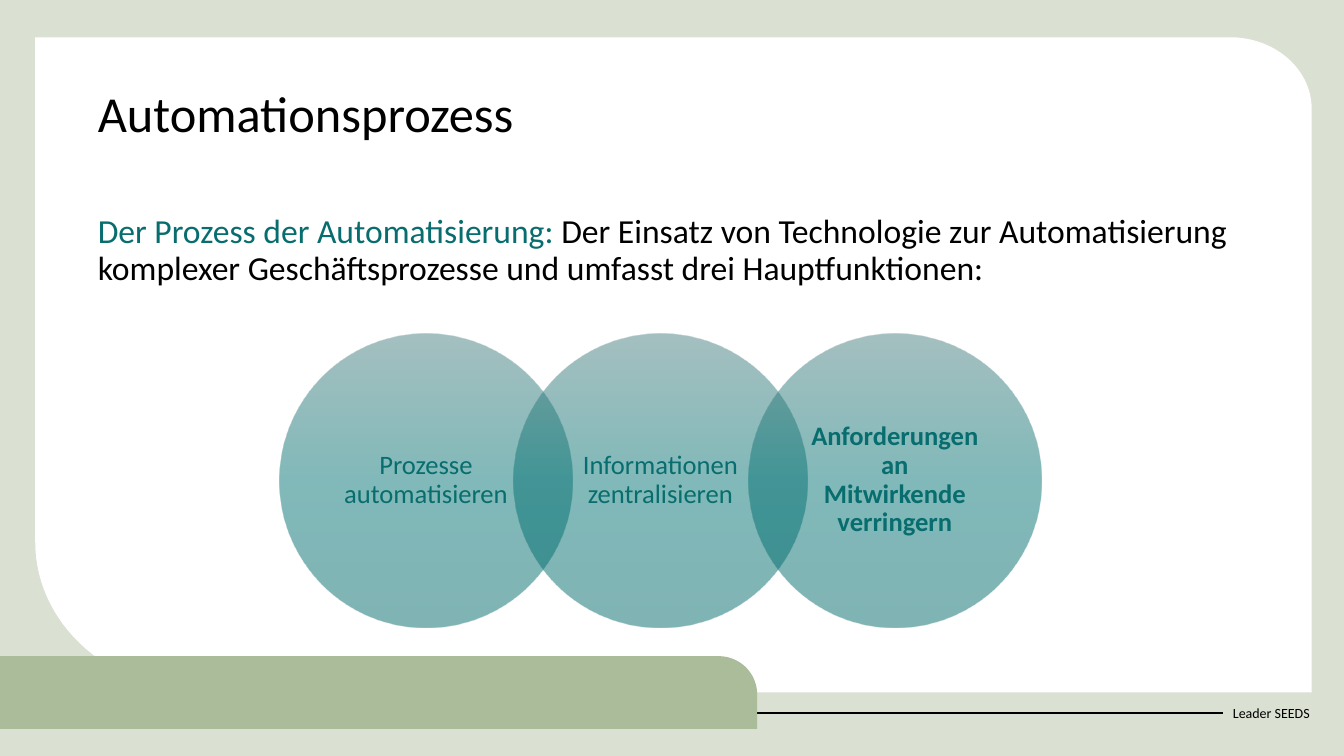
import math
from dataclasses import dataclass

from pptx import Presentation
from pptx.dml.color import RGBColor
from pptx.enum import shapes, text
from pptx.oxml import parse_xml
from pptx.oxml.ns import nsdecls, qn
from pptx.util import Inches, Pt


@dataclass(frozen=True)
class Theme:
    font: str = "Calibri"
    black: str = "000000"
    white: str = "FFFFFF"
    teal: str = "086D6E"
    sage: str = "AABC99"
    pale: str = "DAE0D2"
    gradient: tuple = ((0, "4B8081"), (50, "037273"), (100, "006869"))
    opacity: int = 50
    title: int = 36
    body: int = 24
    circle: int = 19
    footer: int = 10


THEME = Theme()


def style(r, size, color, bold=False):
    r.font.name, r.font.size, r.font.bold = THEME.font, Pt(size), bold
    r.font.color.rgb = RGBColor.from_string(color)


def place(sp, box):
    sp.left, sp.top, sp.width, sp.height = (Inches(v) for v in box)


def add_panel(s, box, color, top_right, bottom_left=(0, 0)):
    """Draw a rectangle with two elliptical corners, each given as (rx, ry)."""
    x, y, w, h = box
    corners = (
        (x, y, (0, 0), 180),
        (x + w, y, top_right, 270),
        (x + w, y + h, (0, 0), 0),
        (x, y + h, bottom_left, 90),
    )
    points = []
    for cx, cy, (rx, ry), start in corners:
        mid = math.radians(start + 45)
        ox = cx - math.copysign(rx, math.cos(mid))
        oy = cy - math.copysign(ry, math.sin(mid))
        for step in range(31 if rx else 1):
            a = math.radians(start + 3 * step)
            points.append((Inches(ox + rx * math.cos(a)), Inches(oy + ry * math.sin(a))))
    builder = s.shapes.build_freeform(*points[0])
    builder.add_line_segments(points[1:], close=True)
    sp = builder.convert_to_shape()
    sp.shadow.inherit = False
    sp.fill.solid()
    sp.fill.fore_color.rgb = RGBColor.from_string(color)
    sp.line.fill.background()


def add_footer(s, box):
    """Draw the rule, the green bar and the label at the foot of the slide."""
    x, y, w, h = box
    label_width, rule_y = 1.01, y + 0.56
    label_x = x + w - label_width
    rule = s.shapes.add_connector(
        shapes.MSO_CONNECTOR.STRAIGHT,
        Inches(x), Inches(rule_y), Inches(label_x), Inches(rule_y),
    )
    rule.line.color.rgb = RGBColor.from_string(THEME.black)
    rule.line.width = Pt(1.5)
    rule._element.spPr.append(parse_xml(f"<a:effectLst {nsdecls('a')}/>"))
    add_panel(s, (x, y, 7.51, h), THEME.sage, (0.38, 0.38))

    label = s.shapes.add_textbox(
        Inches(label_x), Inches(rule_y - 0.2), Inches(label_width), Inches(0.4)
    )
    tf = label.text_frame
    tf.word_wrap = True
    tf.vertical_anchor = text.MSO_ANCHOR.MIDDLE
    tf.text = "Leader SEEDS"
    style(tf.paragraphs[0].runs[0], THEME.footer, THEME.black)


def add_copy(sp, box, size, pieces):
    """Fill a placeholder with one left-aligned paragraph of (text, colour) pieces."""
    place(sp, box)
    tf = sp.text_frame
    tf.word_wrap = True
    tf.auto_size = text.MSO_AUTO_SIZE.NONE
    tf.vertical_anchor = text.MSO_ANCHOR.TOP
    p = tf.paragraphs[0]
    pPr = p._p.get_or_add_pPr()
    pPr.set("marL", "0")
    pPr.set("indent", "0")
    pPr.append(pPr.makeelement(qn("a:buNone"), {}))
    p.alignment = text.PP_ALIGN.LEFT
    p.line_spacing = 0.9
    p.space_before = Pt(0)
    for words, color in pieces:
        r = p.add_run()
        r.text = words
        style(r, size, color)


def gradient_fill():
    stops = "".join(
        f'<a:gs pos="{pos * 1000}"><a:srgbClr val="{color}">'
        f'<a:alpha val="{THEME.opacity * 1000}"/></a:srgbClr></a:gs>'
        for pos, color in THEME.gradient
    )
    return parse_xml(
        f'<a:gradFill {nsdecls("a")} rotWithShape="1"><a:gsLst>{stops}</a:gsLst>'
        '<a:lin ang="5400000" scaled="0"/></a:gradFill>'
    )


def add_circles(s, box, labels):
    """Spread overlapping circles evenly over the box; labels are (text, bold)."""
    x, y, w, d = box
    pitch = (w - d) / (len(labels) - 1)
    for i, (words, bold) in enumerate(labels):
        sp = s.shapes.add_shape(
            shapes.MSO_SHAPE.OVAL, Inches(x + i * pitch), Inches(y), Inches(d), Inches(d)
        )
        sp._element.spPr.insert(2, gradient_fill())
        sp.line.fill.background()
        sp.shadow.inherit = False
        tf = sp.text_frame
        tf.word_wrap = True
        tf.vertical_anchor = text.MSO_ANCHOR.MIDDLE
        tf.margin_left = tf.margin_right = Inches(0.16)
        tf.margin_top = tf.margin_bottom = Inches(0.03)
        tf.text = words
        p = tf.paragraphs[0]
        p.alignment = text.PP_ALIGN.CENTER
        p.line_spacing = 0.9
        style(p.runs[0], THEME.circle, THEME.teal, bold)


def add_process_slide(prs):
    s = prs.slides.add_slide(prs.slide_layouts[1])
    s.background.fill.solid()
    s.background.fill.fore_color.rgb = RGBColor.from_string(THEME.pale)
    title, body = s.shapes.title, s.placeholders[1]

    add_panel(s, (0.35, 0.37, 12.66, 6.5), THEME.white, (0.81, 0.71), (1.7, 1.49))
    add_footer(s, (0, 6.51, 13.14, 0.72))
    for sp in (title, body):
        s.shapes._spTree.append(sp._element)
    add_copy(title, (0.87, 0.83, 11.59, 0.88), THEME.title,
             [("Automationsprozess", THEME.black)])
    add_copy(body, (0.87, 2.08, 11.59, 4.37), THEME.body, [
        ("Der Prozess der Automatisierung:", THEME.teal),
        (" Der Einsatz von Technologie zur Automatisierung komplexer "
         "Geschäftsprozesse und umfasst drei Hauptfunktionen:", THEME.black),
    ])
    add_circles(s, (2.77, 3.31, 7.56, 2.91), [
        ("Prozesse automatisieren", False),
        ("Informationen zentralisieren", False),
        ("Anforderungen an Mitwirkende verringern", True),
    ])


def main():
    prs = Presentation()
    prs.slide_width, prs.slide_height = Inches(13.33), Inches(7.5)
    add_process_slide(prs)
    prs.save("out.pptx")


if __name__ == "__main__":
    main()
